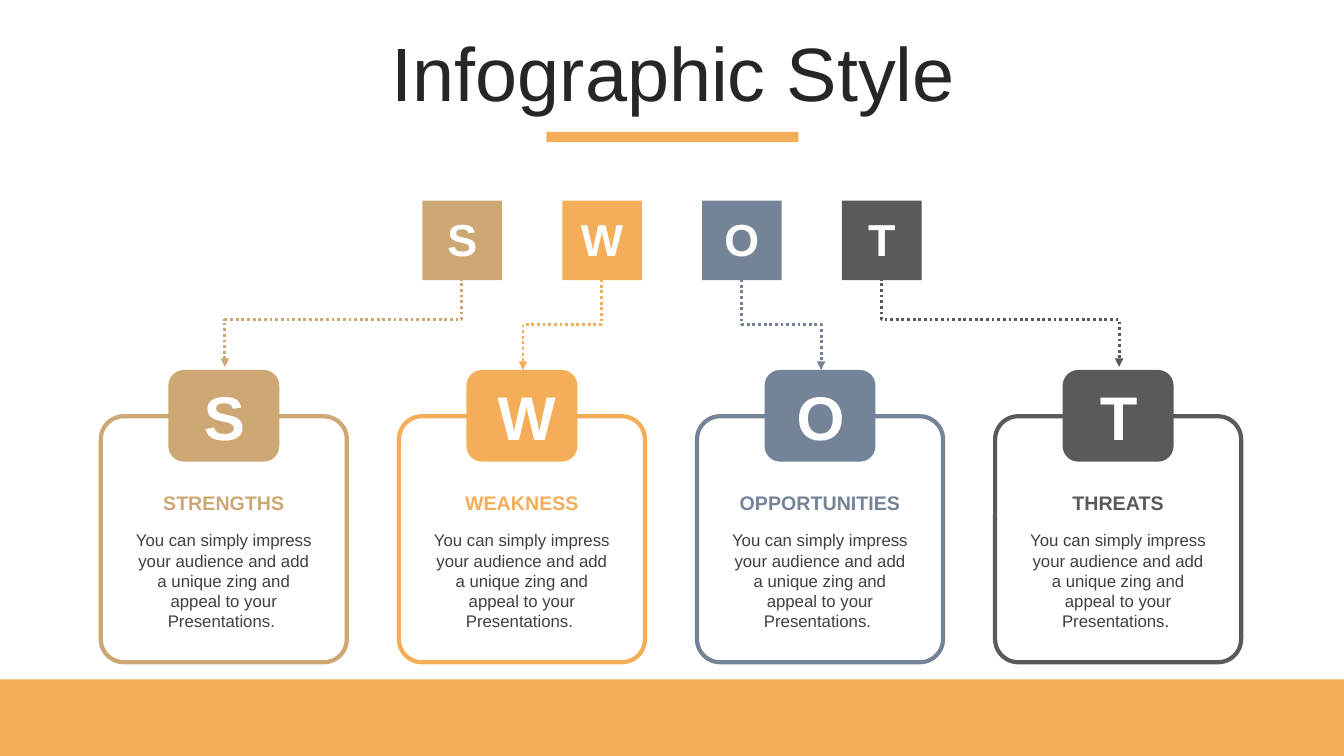
import pptx
import pptx.dml.color
import pptx.enum.dml
import pptx.enum.shapes
import pptx.enum.text
import pptx.util
import lxml.etree

Inches = pptx.util.Inches
Shape = pptx.enum.shapes.MSO_SHAPE
Text = pptx.enum.text

GOLD = "F4AE59"
WHITE = "FFFFFF"
BODY = ("You can simply impress your audience and add a unique zing "
        "and appeal to your Presentations. ")
ITEMS = [
    ("STRENGTHS", "CDA874"),
    ("WEAKNESS", GOLD),
    ("OPPORTUNITIES", "748398"),
    ("THREATS", "5A5A5A"),
]


def color(code):
    return pptx.dml.color.RGBColor.from_string(code)


def apply(target, values):
    for name, value in values.items():
        setattr(target, name, value)


class Board:
    font = "Arial"

    def __init__(self, slide):
        self.slide = slide

    def box(self, kind, left, top, width, height, fill, line=None, round=None):
        shape = self.slide.shapes.add_shape(
            kind, Inches(left), Inches(top), Inches(width), Inches(height))
        shape.shadow.inherit = False
        shape.fill.solid()
        shape.fill.fore_color.rgb = color(fill)
        if line:
            shape.line.color.rgb = color(line)
            shape.line.width = pptx.util.Pt(3)
        else:
            shape.line.fill.background()
        if round:
            shape.adjustments[0] = round

    def text(self, words, left, top, width, height, size, tint, bold=False,
             frame=None, para=None):
        label = self.slide.shapes.add_textbox(
            Inches(left), Inches(top), Inches(width), Inches(height))
        body = label.text_frame
        apply(body, {"word_wrap": True,
                     "auto_size": Text.MSO_AUTO_SIZE.SHAPE_TO_FIT_TEXT,
                     **(frame or {})})
        line = body.paragraphs[0]
        apply(line, {"alignment": Text.PP_ALIGN.CENTER, **(para or {})})
        run = line.add_run()
        run.text = words
        apply(run.font, {"name": self.font, "size": pptx.util.Pt(size), "bold": bold})
        run.font.color.rgb = color(tint)

    def arrow(self, start, end, tint):
        (x1, y1), (x2, y2) = start, end
        mid_x, mid_y = (x1 + x2) / 2, (y1 + y2) / 2
        long, wide = (y2 - y1) / 2, (x1 - x2) / 2
        link = self.slide.shapes.add_connector(
            pptx.enum.shapes.MSO_CONNECTOR.ELBOW,
            Inches(mid_x - long if wide > 0 else mid_x + long),
            Inches(mid_y - abs(wide)),
            Inches(mid_x + long if wide > 0 else mid_x - long),
            Inches(mid_y + abs(wide)))
        apply(link.line, {"width": pptx.util.Pt(2),
                          "dash_style": pptx.enum.dml.MSO_LINE.ROUND_DOT})
        link.line.color.rgb = color(tint)
        props = link.element.spPr
        turn = 90 if wide > 0 else 270
        props.find(pptx.oxml.ns.qn("a:xfrm")).set("rot", str(turn * 60000))
        tail = lxml.etree.SubElement(
            props.find(pptx.oxml.ns.qn("a:ln")), pptx.oxml.ns.qn("a:tailEnd"))
        tail.set("type", "triangle")
        lxml.etree.SubElement(props, pptx.oxml.ns.qn("a:effectLst"))


def main():
    deck = pptx.Presentation()
    apply(deck, {"slide_width": Inches(13.33), "slide_height": Inches(7.5)})
    board = Board(deck.slides.add_slide(deck.slide_layouts[6]))

    board.box(Shape.RECTANGLE, 5.42, 1.31, 2.5, 0.1, GOLD)
    board.box(Shape.RECTANGLE, 0, 6.74, 13.33, 0.76, GOLD)
    board.text("Infographic Style", 0.35, 0.37, 12.66, 0.79, 54, "262626",
               frame={"auto_size": Text.MSO_AUTO_SIZE.NONE,
                      "vertical_anchor": Text.MSO_ANCHOR.MIDDLE},
               para={"line_spacing": 0.9, "space_before": pptx.util.Pt(10)})

    for i, (name, tint) in enumerate(ITEMS):
        card = 1 + i * 8.87 / 3
        tile = 4.19 + i * 4.16 / 3
        board.box(Shape.ROUNDED_RECTANGLE, card, 4.13, 2.44, 2.44, WHITE, tint, 0.094)
        board.box(Shape.ROUNDED_RECTANGLE, card + 0.67, 3.67, 1.1, 0.91, tint, round=0.17)
        board.text(BODY, card + 0.24, 5.21, 1.96, 1.11, 12, "404040")
        board.text(name, card + 0.24, 4.82, 1.96, 0.34, 14, tint, True)
        board.text(name[0], card + 0.88, 3.71, 0.69, 0.84, 44, WHITE, True)
        board.box(Shape.RECTANGLE, tile, 1.99, 0.79, 0.79, tint)
        board.text(name[0], tile + 0.05, 2.05, 0.69, 0.64, 32, WHITE, True)
        top, tip = (2.7, 3.64) if i in (0, 3) else (2.77, 3.67)
        board.arrow((tile + 0.39, top), (card + 1.23, tip), tint)

    deck.save("out.pptx")


if __name__ == "__main__":
    main()
